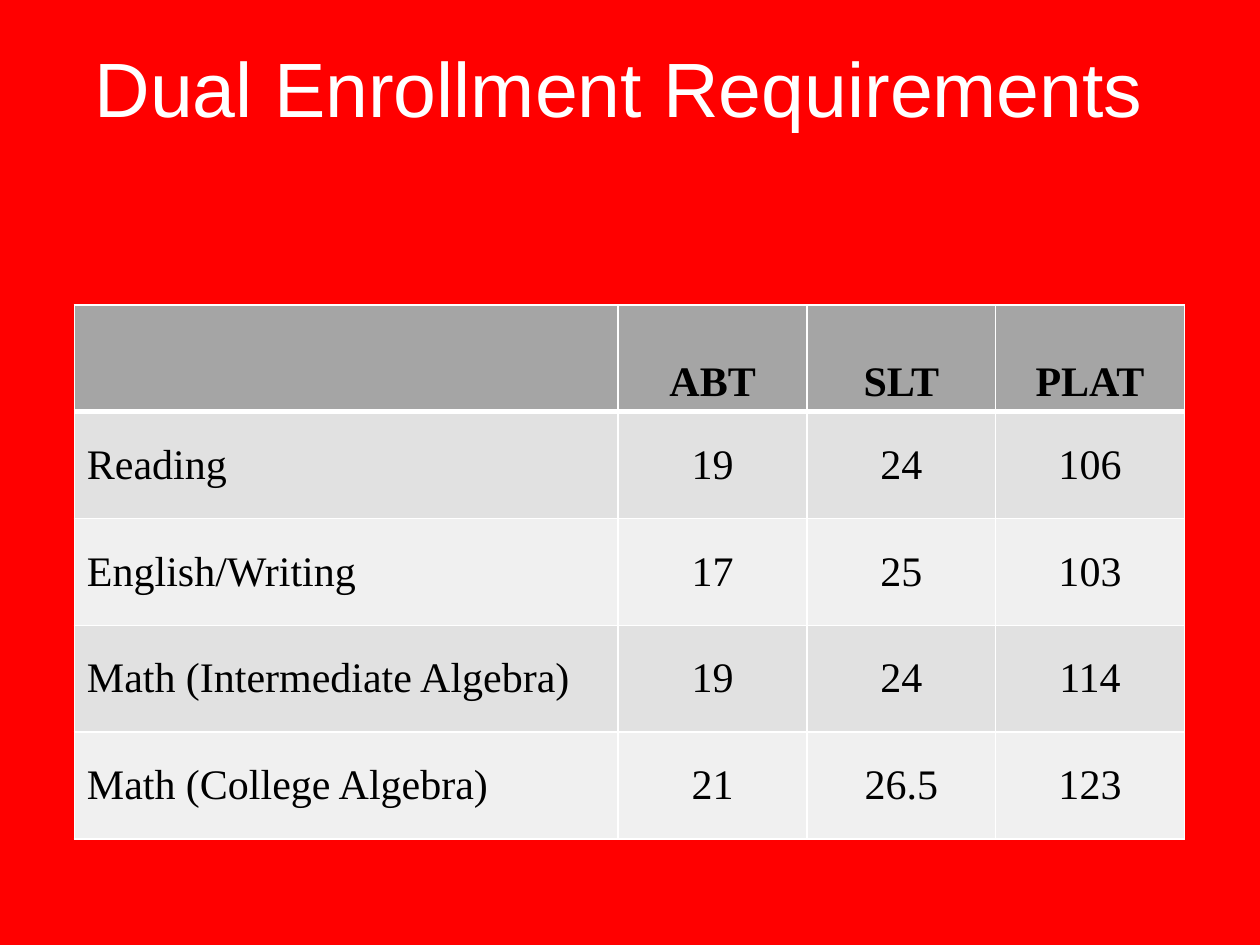
from dataclasses import dataclass

from lxml.etree import SubElement
from pptx import Presentation
from pptx.dml.color import RGBColor as RGB
from pptx.enum.text import MSO_ANCHOR as ANCHOR, PP_ALIGN as ALIGN
from pptx.oxml.ns import qn
from pptx.util import Inches, Pt


@dataclass(frozen=True)
class Theme:
    """Colours, fonts and type sizes of the slide."""
    background: str = "FF0000"
    title: str = "FFFFFF"
    ink: str = "000000"
    rule: str = "FFFFFF"
    header: str = "A5A5A5"
    bands: tuple = ("E1E1E1", "F0F0F0")
    title_font: str = "Arial"
    body_font: str = "Times New Roman"
    title_size: int = 44
    body_size: int = 24
    thin: int = 1
    thick: int = 3


THEME = Theme()
WIDTH, HEIGHT = Inches(10), Inches(7.5)
TITLE_BOX = (Inches(0.33), Inches(0.27), Inches(9.17), Inches(1.58))
SCORES_BOX = (Inches(0.59), Inches(2.42), Inches(8.81), Inches(4.24))
SUBJECT_SHARE = 0.49
SCORES = (
    ("", "ABT", "SLT", "PLAT"),
    ("Reading", "19", "24", "106"),
    ("English/Writing", "17", "25", "103"),
    ("Math (Intermediate Algebra)", "19", "24", "114"),
    ("Math (College Algebra)", "21", "26.5", "123"),
)


def write(frame, text, *, font, size, color, bold=False, align=ALIGN.CENTER):
    """Put one formatted paragraph into a text frame."""
    paragraph = frame.paragraphs[0]
    paragraph.alignment = align
    run = paragraph.add_run()
    run.text = text
    run.font.name, run.font.size, run.font.bold = font, Pt(size), bold
    run.font.color.rgb = RGB.from_string(color)


def rule_cell(cell, top, bottom):
    """Draw the four borders of a cell, with the given top and bottom weights."""
    properties = cell._tc.get_or_add_tcPr()
    weights = {"L": THEME.thin, "R": THEME.thin, "T": top, "B": bottom}
    for side, weight in weights.items():
        line = SubElement(properties, qn(f"a:ln{side}"), w=str(Pt(weight)))
        SubElement(SubElement(line, qn("a:solidFill")), qn("a:srgbClr"), val=THEME.rule)


def add_title(slide, box):
    """Place the slide's heading in the box."""
    frame = slide.shapes.add_textbox(*box).text_frame
    frame.word_wrap = True
    write(frame, "Dual Enrollment Requirements", font=THEME.title_font,
          size=THEME.title_size, color=THEME.title)


def add_scores(slide, box):
    """Place the table of required scores in the box."""
    width, height = box[2:]
    table = slide.shapes.add_table(len(SCORES), len(SCORES[0]), *box).table
    subject_width = int(width * SUBJECT_SHARE)
    test_width = (width - subject_width) // (len(SCORES[0]) - 1)
    for c, column in enumerate(table.columns):
        column.width = test_width if c else subject_width
    for r, scores in enumerate(SCORES):
        table.rows[r].height = height // len(SCORES)
        for c, score in enumerate(scores):
            cell = table.cell(r, c)
            rule_cell(cell, top=THEME.thick if r == 1 else THEME.thin,
                      bottom=THEME.thin if r else THEME.thick)
            cell.fill.solid()
            cell.fill.fore_color.rgb = RGB.from_string(
                THEME.bands[(r - 1) % 2] if r else THEME.header)
            cell.vertical_anchor = ANCHOR.MIDDLE if r else ANCHOR.BOTTOM
            if score:
                write(cell.text_frame, score, font=THEME.body_font,
                      size=THEME.body_size, color=THEME.ink, bold=r == 0,
                      align=ALIGN.CENTER if c else ALIGN.LEFT)


def main():
    """Build and save the slide."""
    deck = Presentation()
    deck.slide_width, deck.slide_height = WIDTH, HEIGHT
    slide = deck.slides.add_slide(deck.slide_layouts[6])
    slide.background.fill.solid()
    slide.background.fill.fore_color.rgb = RGB.from_string(THEME.background)
    add_title(slide, TITLE_BOX)
    add_scores(slide, SCORES_BOX)
    deck.save("out.pptx")


if __name__ == "__main__":
    main()
